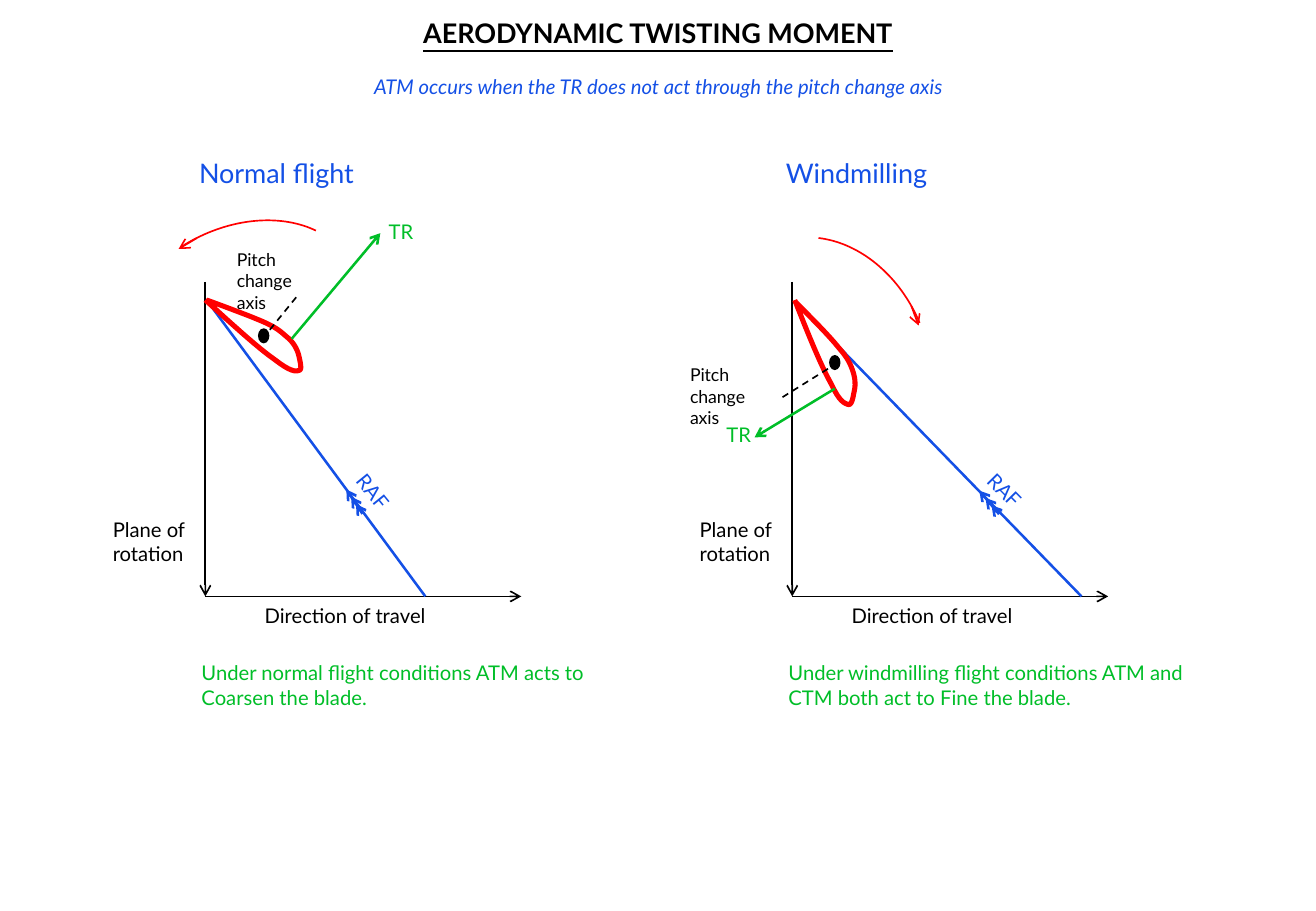
from dataclasses import dataclass

from pptx import Presentation, dml, oxml, util as u
from pptx.dml.color import RGBColor
from pptx.enum import dml as lines, shapes, text
from pptx.oxml import ns

BLACK = RGBColor(0x00, 0x00, 0x00)
BLUE = RGBColor(0x14, 0x50, 0xE6)
GREEN = RGBColor(0x00, 0xBE, 0x28)
RED = RGBColor(0xFF, 0x00, 0x00)
FONT = "Lato"
AXIS_Y = 4.91

Point = tuple[float, float]
Box = tuple[float, float, float, float]
Segment = tuple[Point, Point]


@dataclass(frozen=True)
class Flight:
    heading: str
    conclusion: str
    conclusion_width: float
    origin_x: float
    blade: list[Point]
    airflow: Segment
    airflow_tip: Point
    airflow_step: Point
    airflow_label: Point
    airflow_angle: float
    pitch_axis: Point
    pitch_pointer: Segment
    pitch_label: Point
    reaction: Segment
    reaction_label: Point
    twist: Box
    twist_angle: float
    twist_mirrored: bool
    twist_tip: Segment


NORMAL = Flight(
    heading="Normal flight",
    conclusion="Under normal flight conditions ATM acts to Coarsen the blade.",
    conclusion_width=3.76,
    origin_x=1.69,
    blade=[(1.69, 2.47), (1.91, 2.67), (2.13, 2.87), (2.26, 2.96),
           (2.39, 3.06), (2.43, 3.06), (2.46, 3.05),
           (2.49, 3.05), (2.47, 2.98), (2.46, 2.93),
           (2.45, 2.89), (2.43, 2.84), (2.38, 2.79),
           (2.33, 2.75), (2.3, 2.71), (2.19, 2.66),
           (2.08, 2.61), (1.89, 2.54), (1.7, 2.47)],
    airflow=((1.7, 2.47), (3.5, AXIS_Y)),
    airflow_tip=(2.85, 4.03),
    airflow_step=(0.04, 0.06),
    airflow_label=(2.7, 4.14),
    airflow_angle=50.9,
    pitch_axis=(2.13, 2.71),
    pitch_pointer=((2.16, 2.79), (2.46, 2.42)),
    pitch_label=(1.85, 2.0),
    reaction=((2.4, 2.79), (3.13, 1.92)),
    reaction_label=(3.1, 1.76),
    twist=(0.83, 1.9, 2.23, 1.69),
    twist_angle=327.4,
    twist_mirrored=False,
    twist_tip=((1.62, 1.96), (1.47, 2.05)),
)

WINDMILLING = Flight(
    heading="Windmilling",
    conclusion="Under windmilling flight conditions ATM and CTM both act to Fine the blade.",
    conclusion_width=3.69,
    origin_x=6.52,
    blade=[(6.54, 2.47), (6.65, 2.75), (6.76, 3.02), (6.84, 3.16),
           (6.91, 3.31), (6.95, 3.32), (6.98, 3.33),
           (7.01, 3.34), (7.02, 3.27), (7.03, 3.22),
           (7.04, 3.18), (7.04, 3.12), (7.02, 3.06),
           (7.0, 3.0), (6.98, 2.95), (6.9, 2.86),
           (6.82, 2.76), (6.68, 2.62), (6.54, 2.48)],
    airflow=((6.54, 2.48), (8.9, AXIS_Y)),
    airflow_tip=(8.06, 4.04),
    airflow_step=(0.05, 0.06),
    airflow_label=(7.92, 4.11),
    airflow_angle=45.4,
    pitch_axis=(6.83, 2.93),
    pitch_pointer=((6.44, 3.27), (6.84, 3.02)),
    pitch_label=(5.58, 2.95),
    reaction=((6.87, 3.2), (6.21, 3.6)),
    reaction_label=(5.88, 3.43),
    twist=(5.73, 2.14, 2.12, 1.69),
    twist_angle=67.4,
    twist_mirrored=True,
    twist_tip=((7.5, 2.52), (7.56, 2.68)),
)


def inches(values) -> list[u.Length]:
    return [u.Inches(value) for value in values]


def write(shape, words: str, size: float, color: RGBColor) -> None:
    frame = shape.text_frame
    frame.text = words
    frame.word_wrap = True
    frame.vertical_anchor = text.MSO_ANCHOR.TOP
    frame.auto_size = text.MSO_AUTO_SIZE.SHAPE_TO_FIT_TEXT
    font = frame.paragraphs[0].runs[0].font
    font.name, font.size, font.color.rgb = FONT, u.Pt(size), color


def add_label(slide, words: str, box: Box, size: float, color: RGBColor,
              angle: float = 0) -> None:
    label = slide.shapes.add_textbox(*inches(box))
    write(label, words, size, color)
    label.rotation = angle


def fill_banner(placeholder, words: str, box: Box, size: float, color: RGBColor):
    placeholder.left, placeholder.top, placeholder.width, placeholder.height = inches(box)
    write(placeholder, words, size, color)
    paragraph = placeholder.text_frame.paragraphs[0]
    paragraph.alignment = text.PP_ALIGN.CENTER
    paragraph.space_before = u.Pt(0)
    paragraph.line_spacing = 1.0
    return paragraph.runs[0].font


def add_line(slide, segment: Segment, color: RGBColor, width: float = 1,
             arrow: bool = False, dashed: bool = False) -> None:
    start, end = segment
    connector = slide.shapes.add_connector(
        shapes.MSO_CONNECTOR.STRAIGHT, *inches((*start, *end)))
    connector.line.color.rgb = color
    connector.line.width = u.Pt(width)
    if dashed:
        connector.line.dash_style = lines.MSO_LINE.DASH
    properties = connector.element.spPr
    if arrow:
        tail = oxml.parse_xml(f'<a:tailEnd {ns.nsdecls("a")} type="arrow"/>')
        properties.find(ns.qn("a:ln")).append(tail)
    properties.append(oxml.parse_xml(f'<a:effectLst {ns.nsdecls("a")}/>'))


def outline(shape, color: RGBColor, width: float) -> None:
    shape.shadow.inherit = False
    shape.fill.background()
    shape.line.color.rgb = color
    shape.line.width = u.Pt(width)


def curve_points(controls: list[Point], steps: int = 8) -> list[Point]:
    points = [controls[0]]
    for first in range(0, len(controls) - 1, 3):
        a, b, c, d = controls[first:first + 4]
        for step in range(1, steps + 1):
            t = step / steps
            weights = ((1 - t) ** 3, 3 * t * (1 - t) ** 2, 3 * t * t * (1 - t), t ** 3)
            points.append(tuple(
                sum(w * value for w, value in zip(weights, axis))
                for axis in zip(a, b, c, d)))
    return points


def add_blade(slide, controls: list[Point]) -> None:
    start, *others = [tuple(inches(point)) for point in curve_points(controls)]
    builder = slide.shapes.build_freeform(*start)
    builder.add_line_segments(others, close=False)
    outline(builder.convert_to_shape(), RED, 3)


def add_twist(slide, flight: Flight) -> None:
    arc = slide.shapes.add_shape(shapes.MSO_SHAPE.ARC, *inches(flight.twist))
    arc.adjustments[0], arc.adjustments[1] = 162.11, 204.21
    arc.rotation = flight.twist_angle
    if flight.twist_mirrored:
        arc.element.spPr.find(ns.qn("a:xfrm")).set("flipH", "1")
    outline(arc, RED, 1)
    add_line(slide, flight.twist_tip, RED, arrow=True)


def draw_flight(slide, flight: Flight) -> None:
    x = flight.origin_x
    add_twist(slide, flight)
    add_label(slide, flight.heading, (x - 0.15, 1.24, 3.13, 0.37), 16, BLUE)
    add_line(slide, ((x, 2.32), (x, AXIS_Y)), BLACK, arrow=True)
    add_line(slide, ((x, AXIS_Y), (x + 2.6, AXIS_Y)), BLACK, arrow=True)
    add_label(slide, "Plane of rotation", (x - 0.86, 4.21, 1.1, 0.5), 12, BLACK)
    add_label(slide, "Direction of travel", (x + 0.39, 4.92, 1.75, 0.3), 12, BLACK)
    add_line(slide, flight.airflow, BLUE, 1.5)
    (tip_x, tip_y), (dx, dy) = flight.airflow_tip, flight.airflow_step
    for i in range(3):
        tip = (tip_x + i * dx, tip_y + i * dy)
        add_line(slide, ((tip[0] + dx, tip[1] + dy), tip), BLUE, 1.5, arrow=True)
    add_label(slide, "RAF", (*flight.airflow_label, 1.14, 0.3), 12, BLUE,
              flight.airflow_angle)
    add_blade(slide, flight.blade)
    pivot = slide.shapes.add_shape(
        shapes.MSO_SHAPE.OVAL, *inches((*flight.pitch_axis, 0.08, 0.11)))
    outline(pivot, BLACK, 1)
    pivot.fill.solid()
    pivot.fill.fore_color.rgb = BLACK
    add_line(slide, flight.reaction, GREEN, 1.5, arrow=True)
    add_line(slide, flight.pitch_pointer, BLACK, dashed=True)
    add_label(slide, "TR", (*flight.reaction_label, 1.11, 0.3), 12, GREEN)
    add_label(slide, "Pitch change axis", (*flight.pitch_label, 0.92, 0.63), 10.5, BLACK)
    add_label(slide, flight.conclusion,
              (x - 0.13, 5.39, flight.conclusion_width, 0.5), 12, GREEN)


def main() -> None:
    deck = Presentation()
    deck.slide_width, deck.slide_height = inches((10.83, 7.5))
    slide = deck.slides.add_slide(deck.slide_layouts[0])
    title, subtitle = slide.placeholders
    title_font = fill_banner(title, "AERODYNAMIC TWISTING MOMENT",
                             (0, 0.09, 10.83, 0.37), 16, BLACK)
    title_font.bold = title_font.underline = True
    subtitle_font = fill_banner(
        subtitle, "ATM occurs when the TR does not act through the pitch change axis",
        (1.85, 0.56, 7.14, 0.3), 12, BLUE)
    subtitle_font.italic = True
    for flight in (NORMAL, WINDMILLING):
        draw_flight(slide, flight)
    deck.save("out.pptx")


if __name__ == "__main__":
    main()
